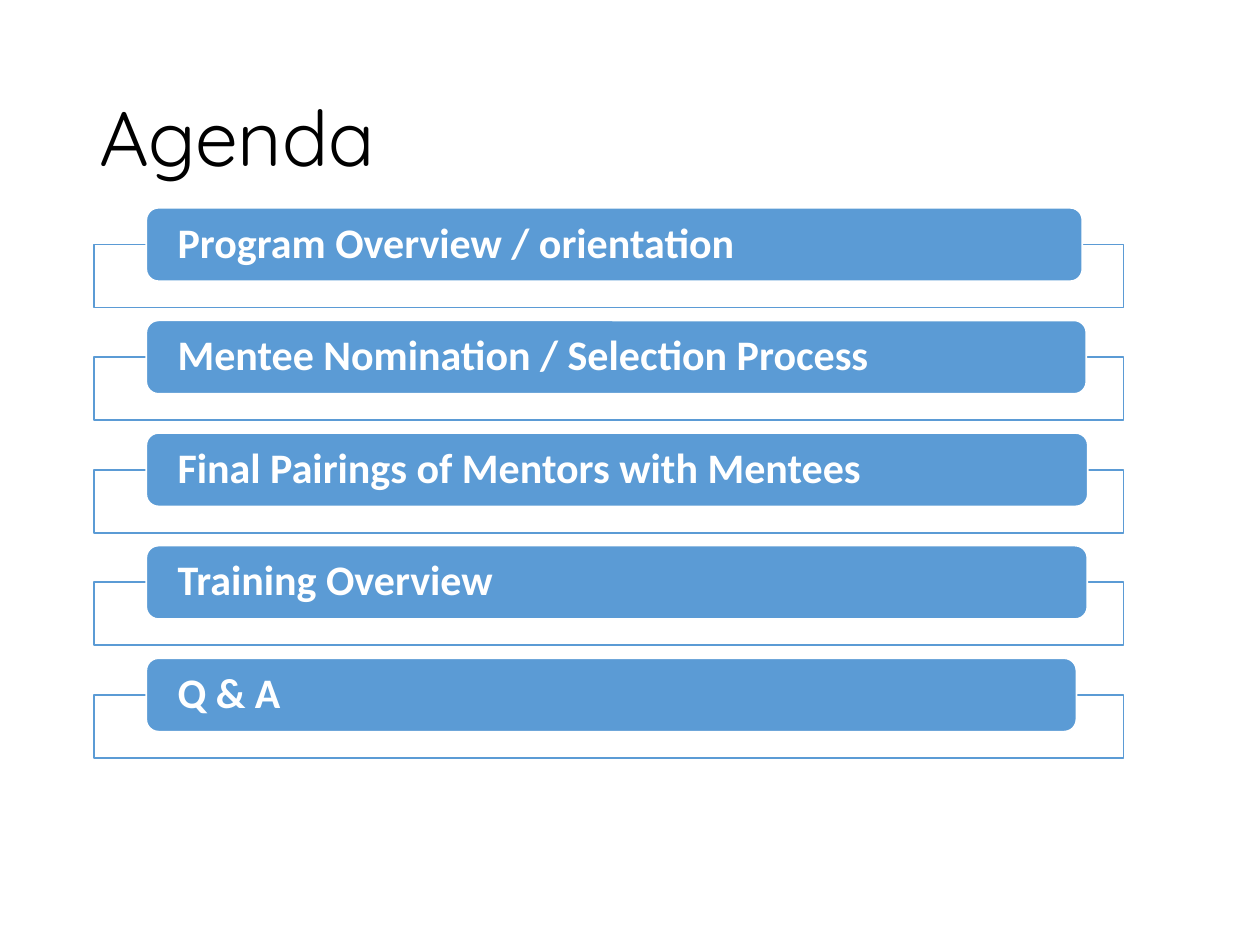
from lxml import etree
from pptx import Presentation
from pptx.dml.color import RGBColor
from pptx.enum.shapes import MSO_SHAPE
from pptx.enum.text import MSO_ANCHOR, PP_ALIGN
from pptx.oxml.ns import qn
from pptx.util import Cm, Pt

RECTANGLE = MSO_SHAPE.RECTANGLE
ROUNDED = MSO_SHAPE.ROUNDED_RECTANGLE
MIDDLE = MSO_ANCHOR.MIDDLE
LEFT = PP_ALIGN.LEFT

BLACK = RGBColor(0x00, 0x00, 0x00)
WHITE = RGBColor(0xFF, 0xFF, 0xFF)
BLUE = RGBColor(0x5B, 0x9B, 0xD5)

TITLE_FONT = {"name": "Quicksand", "size": Pt(44)}
ITEM_FONT = {"name": "Calibri", "size": Pt(24), "bold": True}

# Agenda item and the width of its bar in cm
ITEMS = [
    ("Program Overview / orientation", 18.87),
    ("Mentee Nomination / Selection Process", 18.95),
    ("Final Pairings of Mentors with Mentees", 18.98),
    ("Training Overview", 18.97),
    ("Q & A", 18.75),
]
FIRST_TOP = 4.19
ROW_STEP = 2.27
FRAME_DROP = 0.74


def add_block(kind, left, top, width, height, fill, line):
    block = page.shapes.add_shape(kind, Cm(left), Cm(top), Cm(width), Cm(height))
    block.shadow.inherit = False
    block.fill.solid()
    block.fill.fore_color.rgb = fill
    block.line.color.rgb = line
    block.line.width = Pt(1)
    return block


def write_text(frame, text, color, font_format, inset):
    """Fill a text frame with one left-aligned, vertically centred line."""
    frame_format = {
        "word_wrap": True,
        "vertical_anchor": MIDDLE,
        "margin_left": inset,
        "margin_right": inset,
        "margin_top": 0,
        "margin_bottom": 0,
    }
    for name, value in frame_format.items():
        setattr(frame, name, value)
    para = frame.paragraphs[0]
    para.alignment = LEFT
    para.line_spacing = 0.9
    span = para.add_run()
    span.text = text
    for name, value in font_format.items():
        setattr(span.font, name, value)
    span.font.color.rgb = color


deck = Presentation()
deck.slide_width = Cm(25.4)
deck.slide_height = Cm(19.05)
page = deck.slides.add_slide(deck.slide_layouts[6])

title = page.shapes.add_textbox(Cm(1.75), Cm(1.02), Cm(21.89), Cm(3.68))
write_text(title.text_frame, "Agenda", BLACK, TITLE_FONT, Cm(0.25))

for row, (label, bar_width) in enumerate(ITEMS):
    top = FIRST_TOP + row * ROW_STEP

    outline = add_block(RECTANGLE, 1.9, top + FRAME_DROP, 20.75, 1.27, WHITE, BLUE)
    fill_color = outline.fill._xPr.find(qn("a:solidFill"))[0]
    etree.SubElement(fill_color, qn("a:alpha"), val="90000")

    bar = add_block(ROUNDED, 2.95, top, bar_width, 1.48, BLUE, WHITE)
    write_text(bar.text_frame, label, WHITE, ITEM_FONT, Cm(0.56))

deck.save("out.pptx")
